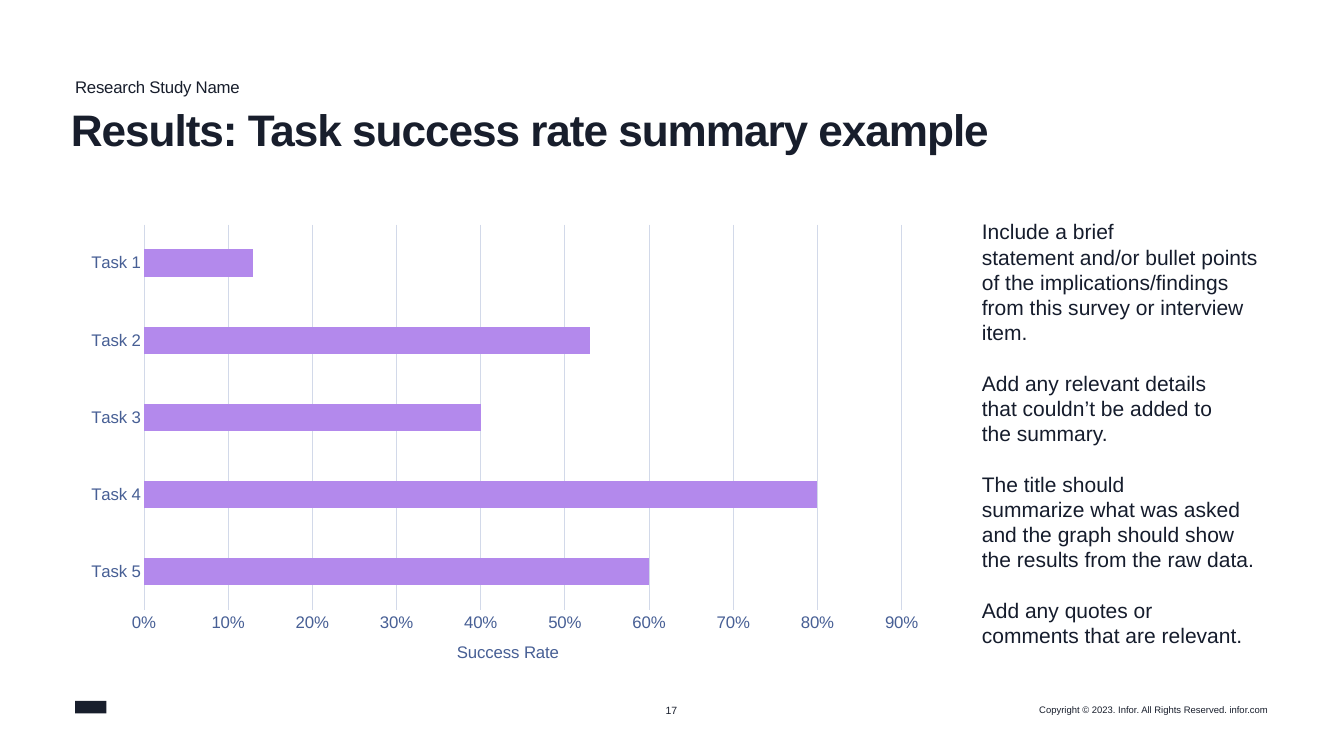
from lxml import etree
from pptx import Presentation
from pptx.chart.data import CategoryChartData
from pptx.dml.color import RGBColor
from pptx.enum.chart import XL_CHART_TYPE, XL_TICK_MARK
from pptx.enum.shapes import MSO_SHAPE
from pptx.enum.text import MSO_ANCHOR, PP_ALIGN
from pptx.oxml.ns import qn
from pptx.util import Pt

BAR = XL_CHART_TYPE.BAR_CLUSTERED
NO_TICK = XL_TICK_MARK.NONE
RECTANGLE = MSO_SHAPE.RECTANGLE
TOP, MIDDLE = MSO_ANCHOR.TOP, MSO_ANCHOR.MIDDLE
LEFT, CENTER, RIGHT = PP_ALIGN.LEFT, PP_ALIGN.CENTER, PP_ALIGN.RIGHT

FONT = "Arial"
NO_BREAK_SPACE = chr(160)
COLORS = {
    "ink": "181E2C",
    "body": "151C2C",
    "axis": "475F95",
    "grid": "D2D9E9",
    "bar": "B389EC",
}
SUCCESS_RATES = {"Task 5": 0.6, "Task 4": 0.8, "Task 3": 0.4, "Task 2": 0.53, "Task 1": 0.13}
# A tilde stands for a no-break space.
FINDINGS = [
    "Include a brief statement~and/or bullet points of the~implications/findings "
    "from this~survey or interview item.",
    "Add any relevant details that~couldn’t be added to the~summary.",
    "The title should summarize~what was asked and the~graph should show "
    "the results~from the raw data.",
    "Add any quotes or comments~that are relevant.",
]


def color(name):
    return RGBColor.from_string(COLORS[name])


def fill_solid(fill, color_name):
    fill.solid()
    fill.fore_color.rgb = color(color_name)


def style_font(font, size, color_name, bold=False):
    font.name = FONT
    font.size = Pt(size)
    font.bold = bold
    font.color.rgb = color(color_name)


def add_text(page, frame, paragraphs, size, color_name="ink", bold=False, align=LEFT,
             anchor=TOP, insets=(0, 0), line_spacing=1.0, gap=0, tracking=0, wrap=True):
    """Add a text box; gap is the space between paragraphs, tracking is in points."""
    box = page.shapes.add_textbox(*map(Pt, frame))
    text = box.text_frame
    text.word_wrap = wrap
    text.vertical_anchor = anchor
    text.margin_left = text.margin_right = Pt(insets[0])
    text.margin_top = text.margin_bottom = Pt(insets[1])
    for index, words in enumerate(paragraphs):
        para = text.add_paragraph() if index else text.paragraphs[0]
        para.alignment = align
        para.line_spacing = line_spacing
        if index:
            para.space_before = Pt(gap)
        span = para.add_run()
        span.text = words.replace("~", NO_BREAK_SPACE)
        style_font(span.font, size, color_name, bold)
        if tracking:
            span.font._element.set("spc", str(round(tracking * 100)))


def add_logo_block(page, frame):
    block = page.shapes.add_shape(RECTANGLE, *map(Pt, frame))
    block.shadow.inherit = False
    fill_solid(block.fill, "ink")
    block.line.fill.background()


def set_layout(parent, successor_tags, **places):
    """Place a chart part by fractions of the chart's size."""
    for old in parent.findall(qn("c:layout")):
        parent.remove(old)
    layout = etree.Element(qn("c:layout"))
    manual = etree.SubElement(layout, qn("c:manualLayout"))
    for tag, value in places.items():
        etree.SubElement(manual, qn(f"c:{tag}")).set("val", str(value))
    successor = next(child for child in parent if child.tag in map(qn, successor_tags))
    successor.addprevious(layout)


def style_axis(axis):
    axis.major_tick_mark = axis.minor_tick_mark = NO_TICK
    style_font(axis.tick_labels.font, 16, "axis")


def style_line(line):
    line.color.rgb = color("grid")
    line.width = Pt(0.75)


def add_success_chart(page, frame):
    data = CategoryChartData(number_format="0%")
    data.categories = list(SUCCESS_RATES)
    data.add_series("Series 1", list(SUCCESS_RATES.values()))
    chart = page.shapes.add_chart(BAR, *map(Pt, frame), data).chart
    chart.has_legend = chart.has_title = False
    style_font(chart.font, 16, "body")

    plot = chart.plots[0]
    plot.gap_width = 182
    plot.vary_by_categories = False
    fill_solid(plot.series[0].format.fill, "bar")

    tasks = chart.category_axis
    style_axis(tasks)
    style_line(tasks.format.line)

    rates = chart.value_axis
    style_axis(rates)
    rates.format.line.fill.background()
    style_line(rates.major_gridlines.format.line)
    rates.minimum_scale, rates.maximum_scale, rates.major_unit = 0, 0.9, 0.1
    rates.tick_labels.number_format = "0%"
    rates.tick_labels.number_format_is_linked = False
    title = rates.axis_title
    span = title.text_frame.paragraphs[0].add_run()
    span.text = "Success Rate"
    style_font(span.font, 16, "axis")

    set_layout(title._element, ("c:overlay", "c:spPr"),
               xMode="edge", yMode="edge", x=0.44, y=0.91)
    set_layout(chart._chartSpace.chart.plotArea, ("c:barChart",), layoutTarget="inner",
               xMode="edge", yMode="edge", x=0.08, y=0.02, w=0.88, h=0.83)


def main():
    deck = Presentation()
    deck.slide_width, deck.slide_height = Pt(1280), Pt(720)
    page = deck.slides.add_slide(deck.slide_layouts[6])

    add_text(page, (71.5, 72, 1137, 17), ["Research Study Name"], 16,
             line_spacing=1.05, tracking=-0.2)
    add_text(page, (67.5, 103.5, 1138, 86), ["Results: Task success rate summary example"], 42,
             bold=True, line_spacing=0.9, tracking=-1)
    add_success_chart(page, (71.5, 205, 820, 442.5))
    add_text(page, (928, 205, 281, 419), FINDINGS, 20, "body", insets=(7.2, 3.6), gap=24)
    add_logo_block(page, (71.5, 667.5, 30, 12))
    add_text(page, (633.5, 670.5, 12, 12), ["17"], 10, align=CENTER, anchor=MIDDLE, wrap=False)
    add_text(page, (985.5, 670.5, 222, 11),
             ["Copyright © 2023. Infor. All Rights Reserved. infor.com"], 9,
             align=RIGHT, anchor=MIDDLE, wrap=False)
    deck.save("out.pptx")


if __name__ == "__main__":
    main()
